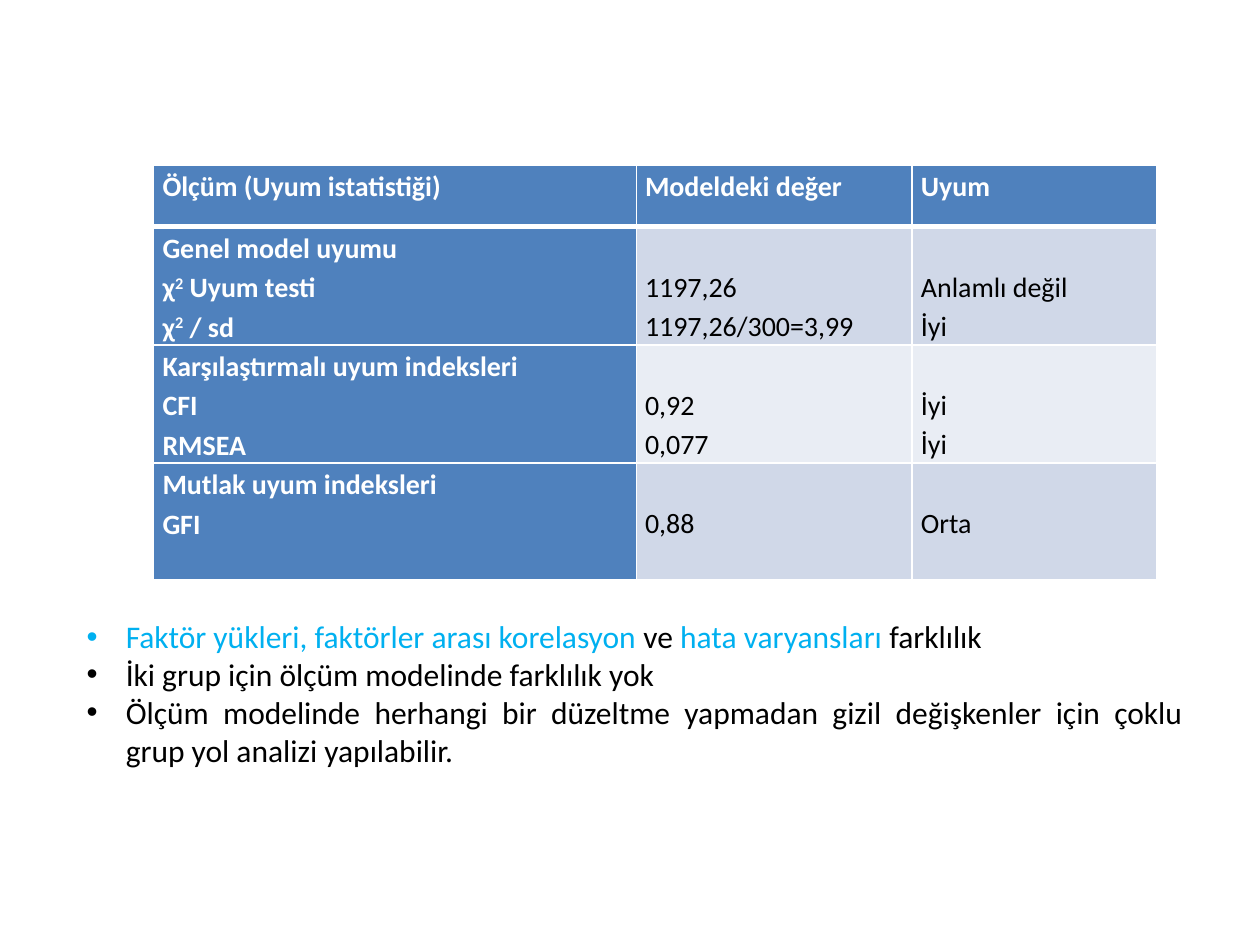
"""Build a slide with a table of model fit statistics and its conclusions."""
from lxml import etree
from pptx import Presentation
from pptx.dml.color import RGBColor
from pptx.enum import text
from pptx.oxml.ns import qn
from pptx.util import Inches, Pt

WHITE = RGBColor(0xFF, 0xFF, 0xFF)
BLACK = RGBColor(0x00, 0x00, 0x00)
BLUE = RGBColor(0x4F, 0x81, 0xBD)
BAND_DARK = RGBColor(0xD0, 0xD8, 0xE8)
BAND_LIGHT = RGBColor(0xE9, 0xED, 0xF4)
CYAN = RGBColor(0x00, 0xB0, 0xF0)

LINE_HEIGHT = 0.31
COLUMN_WIDTHS = [3.83, 2.19, 1.94]
ROW_HEIGHTS = [0.49, 0.93, 0.93, 0.93]
FIT_ROWS = [
    [["Ölçüm (Uyum istatistiği)"], ["Modeldeki değer"], ["Uyum"]],
    [["Genel model uyumu", "χ^2^ Uyum testi", "χ^2^ / sd"],
     ["1197,26 1197,26/300=3,99"], ["Anlamlı değil", "İyi"]],
    [["Karşılaştırmalı uyum indeksleri", "CFI", "RMSEA"],
     ["0,92", "0,077"], ["İyi", "İyi"]],
    [["Mutlak uyum indeksleri", "GFI"], ["0,88"], ["Orta"]],
]
CONCLUSIONS = [
    [("Faktör yükleri, faktörler arası korelasyon ", CYAN), ("ve", BLACK),
     (" hata varyansları ", CYAN), ("farklılık", BLACK)],
    [("İki grup için ölçüm modelinde farklılık yok", BLACK)],
    [("Ölçüm modelinde herhangi bir düzeltme yapmadan gizil değişkenler "
      "için çoklu grup yol analizi yapılabilir.", BLACK)],
]


def apply_format(target, values):
    """Set each named format value on the target."""
    for name, value in values.items():
        setattr(target, name, value)


def add_run(paragraph, words, size, color, bold=False):
    """Add a formatted run to the paragraph."""
    run = paragraph.add_run()
    run.text = words
    apply_format(run.font, {"name": "Calibri", "size": Pt(size), "bold": bold})
    run.font.color.rgb = color
    return run


def paragraph_at(frame, index):
    """Return the first paragraph, or a new one for later indexes."""
    return frame.add_paragraph() if index else frame.paragraphs[0]


def set_borders(cell, widths):
    """Draw white borders with widths in points, keyed by side."""
    properties = cell._tc.get_or_add_tcPr()
    for side, width in widths.items():
        line = etree.SubElement(properties, qn(f"a:ln{side}"), w=str(Pt(width)))
        fill = etree.SubElement(line, qn("a:solidFill"))
        etree.SubElement(fill, qn("a:srgbClr"), val=str(WHITE))


def fill_cell(cell, lines, row, column):
    """Write and style one cell according to its place in the table."""
    heading = row == 0 or column == 0
    set_borders(cell, {"L": 1, "R": 1, "T": 3 if row == 1 else 1,
                       "B": 3 if row == 0 else 1})
    cell.fill.solid()
    band = BAND_DARK if row % 2 else BAND_LIGHT
    cell.fill.fore_color.rgb = BLUE if heading else band
    apply_format(cell, {
        "margin_left": Inches(0.07), "margin_right": Inches(0.07),
        "margin_top": Inches(0 if heading else LINE_HEIGHT),
        "margin_bottom": 0, "vertical_anchor": text.MSO_ANCHOR.TOP})
    for index, line in enumerate(lines):
        paragraph = paragraph_at(cell.text_frame, index)
        paragraph.line_spacing = 1.15
        for part, words in enumerate(line.split("^")):
            run = add_run(paragraph, words, 16, WHITE if heading else BLACK, heading)
            if part % 2:
                run.font._element.set("baseline", "30000")


def add_fit_table(slide):
    """Add the table of fit statistics."""
    table = slide.shapes.add_table(
        len(FIT_ROWS), len(COLUMN_WIDTHS), Inches(1.22), Inches(1.31),
        Inches(sum(COLUMN_WIDTHS)), Inches(sum(ROW_HEIGHTS))).table
    for column, width in zip(table.columns, COLUMN_WIDTHS):
        column.width = Inches(width)
    for row, height in zip(table.rows, ROW_HEIGHTS):
        row.height = Inches(height)
    for row, cells in enumerate(FIT_ROWS):
        for column, lines in enumerate(cells):
            fill_cell(table.cell(row, column), lines, row, column)


def add_bullet(paragraph):
    """Give the paragraph a hanging round bullet."""
    properties = paragraph._p.get_or_add_pPr()
    indent = Inches(0.31)
    properties.set("marL", str(indent))
    properties.set("indent", str(-indent))
    etree.SubElement(properties, qn("a:buFont"), typeface="Arial")
    etree.SubElement(properties, qn("a:buChar"), char="•")


def add_conclusions(slide):
    """Add the bulleted conclusions below the table."""
    frame = slide.shapes.add_textbox(
        Inches(0.59), Inches(4.85), Inches(8.9), Inches(1.31)).text_frame
    apply_format(frame, {"word_wrap": True,
                         "auto_size": text.MSO_AUTO_SIZE.SHAPE_TO_FIT_TEXT})
    for index, parts in enumerate(CONCLUSIONS):
        paragraph = paragraph_at(frame, index)
        add_bullet(paragraph)
        paragraph.alignment = text.PP_ALIGN.JUSTIFY
        for words, color in parts:
            add_run(paragraph, words, 18, color)


def main():
    """Build and save the slide."""
    presentation = Presentation()
    apply_format(presentation, {"slide_width": Inches(10),
                                "slide_height": Inches(7.5)})
    slide = presentation.slides.add_slide(presentation.slide_layouts[6])
    add_fit_table(slide)
    add_conclusions(slide)
    presentation.save("out.pptx")


if __name__ == "__main__":
    main()
